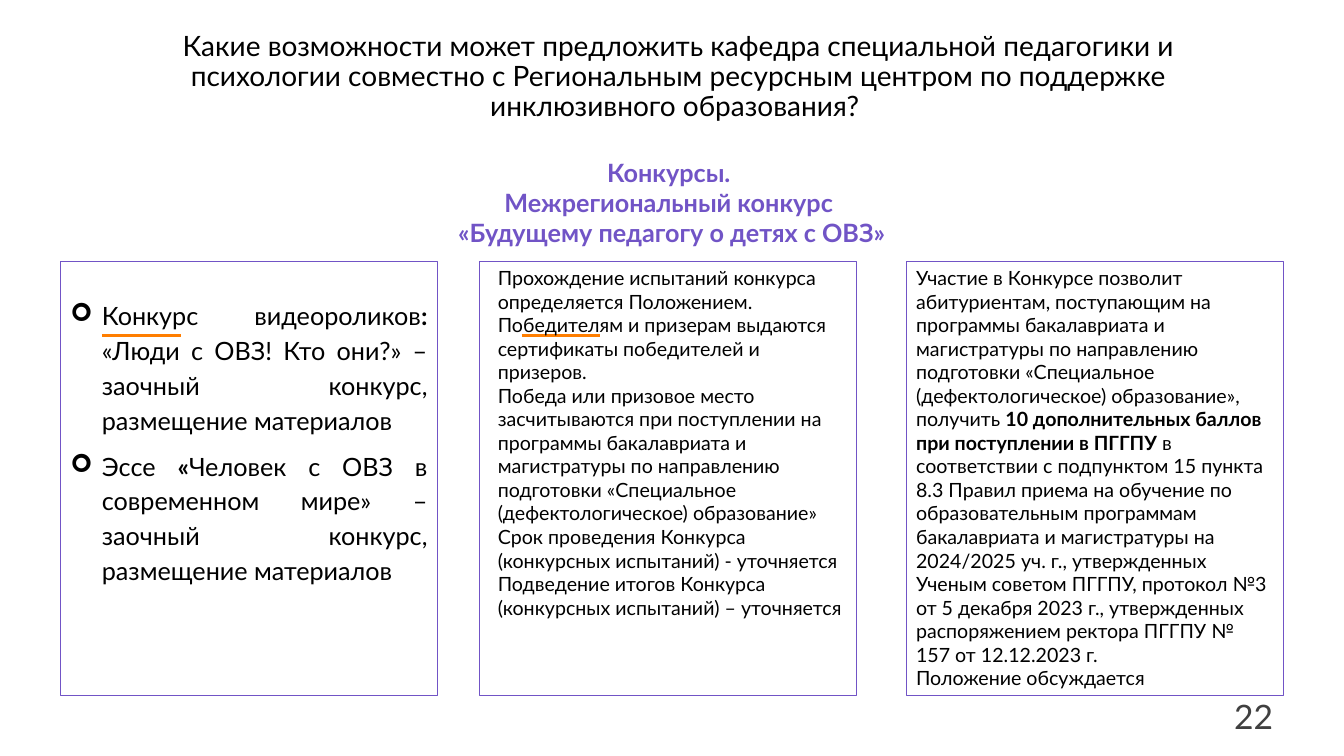
import dataclasses

import pptx
import pptx.dml.color
import pptx.enum.shapes
import pptx.enum.text
import pptx.oxml.ns
import pptx.util
from lxml import etree

Pt = pptx.util.Pt
Color = pptx.dml.color.RGBColor.from_string
Align = pptx.enum.text.PP_ALIGN
Anchor = pptx.enum.text.MSO_ANCHOR
qn = pptx.oxml.ns.qn


@dataclasses.dataclass(frozen=True)
class Theme:
    font: str = "Lato"
    black: str = "000000"
    gray: str = "404040"
    violet: str = "7154C6"
    orange: str = "FF7E00"
    title: int = 20
    heading: int = 18
    body: int = 14
    number: int = 24


theme = Theme()


def write(box, paragraphs, size=theme.body, color=theme.black, bold=False,
          align=Align.LEFT, anchor=Anchor.TOP, spacing=1.0, after=0, bullet=None):
    """Fill a box; a paragraph is a string or a list of spans, every second one bold."""
    frame = box.text_frame
    frame.word_wrap = True
    frame.auto_size = pptx.enum.text.MSO_AUTO_SIZE.NONE
    frame.vertical_anchor = anchor
    for index, spans in enumerate(paragraphs):
        para = frame.paragraphs[0] if index == 0 else frame.add_paragraph()
        para.alignment = align
        para.line_spacing = spacing
        para.space_before = Pt(0)
        para.space_after = Pt(after)
        if bullet:
            properties = para._p.get_or_add_pPr()
            properties.set("marL", str(Pt(22.5)))
            properties.set("indent", str(Pt(-22.5)))
            etree.SubElement(properties, qn("a:buFont"), typeface="Wingdings")
            etree.SubElement(properties, qn("a:buChar"), char=bullet)
        for position, text in enumerate([spans] if isinstance(spans, str) else spans):
            span = para.add_run()
            span.text = text
            span.font.name = theme.font
            span.font.size = Pt(size)
            span.font.bold = bold or position % 2 == 1
            span.font.color.rgb = Color(color)


deck = pptx.Presentation()
deck.slide_width, deck.slide_height = Pt(960), Pt(540)
page = deck.slides.add_slide(deck.slide_layouts[5])
shapes = page.shapes

title = shapes.title
title.left, title.top, title.width, title.height = Pt(103), Pt(57.6), Pt(763.2), Pt(33.8)
write(title, [
    "Какие возможности может предложить кафедра специальной педагогики и психологии "
    "совместно с Региональным ресурсным центром по поддержке инклюзивного образования? ",
], size=theme.title, align=Align.CENTER, anchor=Anchor.BOTTOM, spacing=0.9)

number = shapes.add_textbox(Pt(815), Pt(496.8), Pt(101.5), Pt(28.8))
write(number, ["22"], size=theme.number, color=theme.gray,
      align=Align.RIGHT, anchor=Anchor.MIDDLE)

heading = shapes.add_textbox(Pt(43.2), Pt(108.7), Pt(873.4), Pt(94.3))
write(heading, [
    "Конкурсы. ",
    "Межрегиональный конкурс ",
    "«Будущему педагогу о детях с ОВЗ»",
], size=theme.heading, color=theme.violet, bold=True, align=Align.CENTER)

card_top, card_width, card_height = 186.5, 269.3, 310.3
contests_left, trials_left, benefits_left = 43.2, 342.7, 647.3

for left in (contests_left, trials_left, benefits_left):
    card = shapes.add_shape(pptx.enum.shapes.MSO_SHAPE.RECTANGLE,
                            Pt(left), Pt(card_top), Pt(card_width), Pt(card_height))
    card.shadow.inherit = False
    card.fill.background()
    card.line.color.rgb = Color(theme.violet)
    card.line.width = Pt(0.75)

for left in (contests_left, trials_left):
    accent = shapes.add_connector(pptx.enum.shapes.MSO_CONNECTOR.STRAIGHT,
                                  Pt(left + 30), Pt(239.8), Pt(left + 86), Pt(239.8))
    accent.line.color.rgb = Color(theme.orange)
    accent.line.width = Pt(2.25)
    etree.SubElement(accent._element.spPr, qn("a:effectLst"))

contests = shapes.add_textbox(Pt(contests_left), Pt(208), Pt(card_width), Pt(267.8))
write(contests, [
    ["Конкурс видеороликов", ": ",
     "«Люди с ОВЗ! Кто они?» – заочный конкурс, размещение материалов"],
    ["Эссе ", "«",
     "Человек с ОВЗ в современном мире» – заочный конкурс, размещение материалов"],
], size=theme.heading, align=Align.JUSTIFY, spacing=1.15, after=8, bullet="➢")

benefits = shapes.add_textbox(Pt(benefits_left), Pt(card_top), Pt(card_width), Pt(329.8))
write(benefits, [
    ["Участие в Конкурсе позволит абитуриентам, поступающим на программы бакалавриата "
     "и магистратуры по направлению подготовки «Специальное (дефектологическое) "
     "образование», получить ",
     "10 дополнительных баллов при поступлении в ПГГПУ ",
     "в соответствии с подпунктом 15 пункта 8.3 Правил приема на обучение по "
     "образовательным программам бакалавриата и магистратуры на 2024/2025 уч. г., "
     "утвержденных Ученым советом ПГГПУ, протокол №3 от 5 декабря 2023 г., "
     "утвержденных распоряжением ректора ПГГПУ № 157 от 12.12.2023 г."],
    "Положение обсуждается",
])

trials = shapes.add_textbox(Pt(348.5), Pt(card_top), Pt(263.5), Pt(312.5))
write(trials, [
    "Прохождение испытаний конкурса определяется Положением.",
    "Победителям и призерам выдаются сертификаты победителей и призеров.",
    "Победа или призовое место засчитываются при поступлении на программы бакалавриата "
    "и магистратуры по направлению подготовки «Специальное (дефектологическое) "
    "образование»",
    "Срок проведения Конкурса (конкурсных испытаний) - уточняется",
    "Подведение итогов Конкурса (конкурсных испытаний) – уточняется",
])

deck.save("out.pptx")
